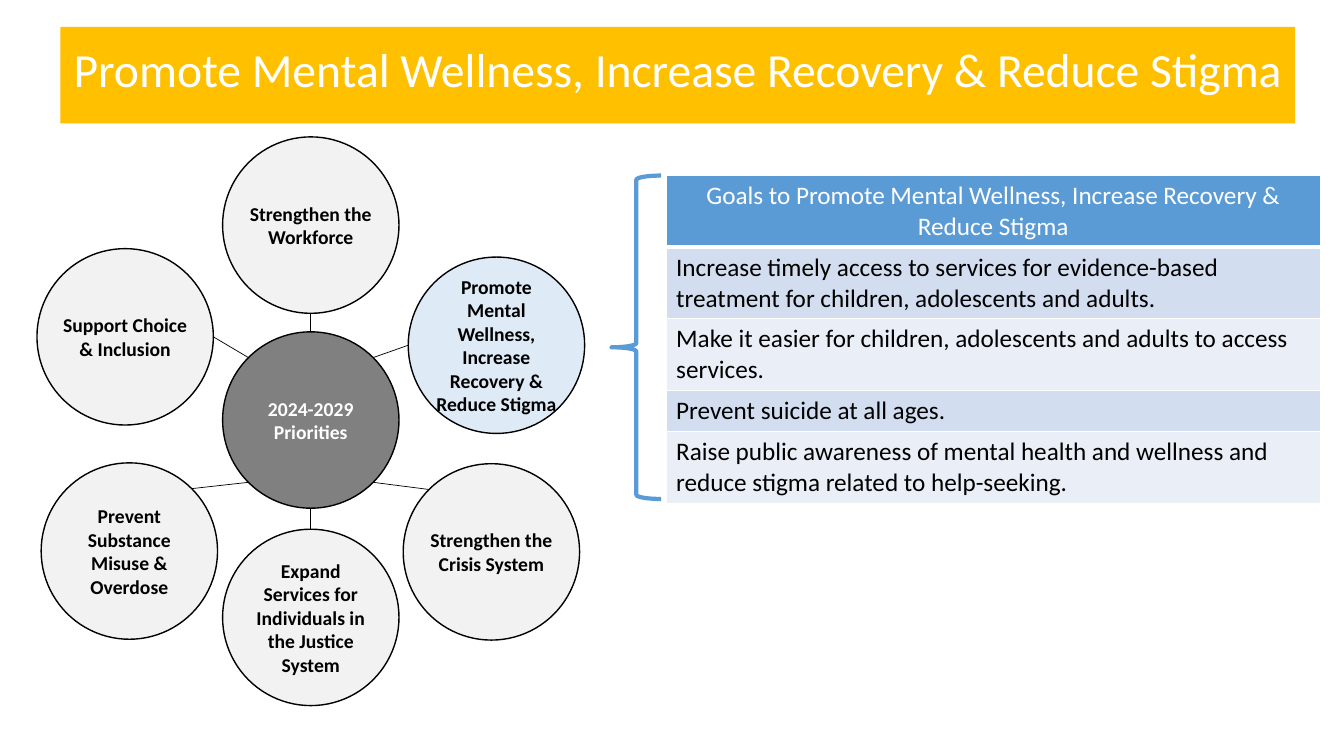
from math import cos, pi, sin

from lxml.etree import SubElement
from pptx import Presentation
from pptx.dml.color import RGBColor
from pptx.enum.shapes import MSO_CONNECTOR, MSO_SHAPE
from pptx.enum.text import MSO_ANCHOR, MSO_AUTO_SIZE, PP_ALIGN
from pptx.oxml.ns import qn
from pptx.util import Inches, Pt

TITLE = "Promote Mental Wellness, Increase Recovery & Reduce Stigma"
SIZE = 21
HUB = (26.5, 39.5)
RIGHT, LOW_RIGHT, LOW, LOW_LEFT, LEFT, UP_LEFT, UP, UP_RIGHT = range(8)
NODES = [
    ("Prevent Substance Misuse & Overdose", (4.9, 55.1), "F2F2F2", LOW_LEFT, UP_RIGHT),
    ("Strengthen the Crisis System", (48, 55.2), "F2F2F2", LOW_RIGHT, UP_LEFT),
    ("Strengthen the Workforce", (26.5, 16.3), "F2F2F2", UP, LOW),
    (TITLE, (48.6, 30.6), "DEEBF7", UP_RIGHT, LEFT),
    ("Support Choice & Inclusion", (4.4, 29.6), "F2F2F2", UP_LEFT, RIGHT),
    ("Expand Services for Individuals in the Justice System", (26.5, 63), "F2F2F2", LOW, UP),
]
GOALS = [
    ("Increase timely access to services for evidence-based treatment for children, "
     "adolescents and adults.", 8.5),
    ("Make it easier for children, adolescents and adults to access services.", 8.5),
    ("Prevent suicide at all ages.", 4.9),
    ("Raise public awareness of mental health and wellness and reduce stigma "
     "related to help-seeking.", 8.5),
]


def color(code):
    return RGBColor.from_string(code)


def grid(*cells):
    """Turn cells of a 160 by 90 grid into slide lengths."""
    return [Inches(cell / 12) for cell in cells]


def rim(spot, side):
    """Find a point on a circle's rim, in eighths of a turn."""
    turn = side * pi / 4
    half = SIZE / 2
    return spot[0] + half + half * cos(turn), spot[1] + half + half * sin(turn)


class Deck:
    """Hold the style and the current slide."""

    font = "Calibri"
    ink = "000000"
    white = "FFFFFF"
    blue = "5B9BD5"
    bands = ("D2DEEF", "EAEFF7")

    def __init__(self):
        self.file = Presentation()
        self.file.slide_width, self.file.slide_height = grid(160, 90)
        self.slide = self.file.slides.add_slide(self.file.slide_layouts[5])
        self.shapes = self.slide.shapes

    def label(self, frame, text, size, tint, bold=False, align=PP_ALIGN.CENTER):
        frame.text = text
        line = frame.paragraphs[0]
        line.alignment = align
        line.font.name = self.font
        line.font.size = Pt(size)
        line.font.bold = bold
        line.font.color.rgb = color(tint)
        return line

    def title(self, text, box, fill):
        shape = self.shapes.title
        shape.left, shape.top, shape.width, shape.height = grid(*box)
        shape.fill.solid()
        shape.fill.fore_color.rgb = color(fill)
        frame = shape.text_frame
        frame.word_wrap = True
        frame.auto_size = MSO_AUTO_SIZE.NONE
        frame.vertical_anchor = MSO_ANCHOR.MIDDLE
        self.label(frame, text, 34, self.white).line_spacing = 0.7

    def circle(self, text, spot, fill, tint):
        shape = self.shapes.add_shape(MSO_SHAPE.OVAL, *grid(*spot, SIZE, SIZE))
        shape.shadow.inherit = False
        shape.fill.solid()
        shape.fill.fore_color.rgb = color(fill)
        shape.line.color.rgb = color(self.ink)
        shape.line.width = Pt(1)
        frame = shape.text_frame
        frame.word_wrap = True
        frame.vertical_anchor = MSO_ANCHOR.MIDDLE
        frame.margin_left = frame.margin_right = 0
        self.label(frame, text, 14, tint, True)

    def link(self, start, end):
        line = self.shapes.add_connector(MSO_CONNECTOR.STRAIGHT, *grid(*start, *end))
        line.line.color.rgb = color(self.ink)
        line.line.width = Pt(0.5)
        SubElement(line._element.spPr, qn("a:effectLst"))

    def brace(self, box):
        shape = self.shapes.add_shape(MSO_SHAPE.RIGHT_BRACE, *grid(*box))
        shape.rotation = 180
        shape.adjustments[0] = 0.083
        shape.adjustments[1] = 0.469
        shape.shadow.inherit = False
        shape.fill.background()
        shape.line.color.rgb = color(self.blue)
        shape.line.width = Pt(3)

    def cell(self, cell, fill, base):
        """Give a cell white edges and a plain fill."""
        props = cell._tc.get_or_add_tcPr()
        for side in "LRTB":
            width = Pt(base if side == "B" else 1)
            edge = SubElement(props, qn(f"a:ln{side}"), w=str(width))
            SubElement(SubElement(edge, qn("a:solidFill")), qn("a:srgbClr"), val=self.white)
        cell.fill.solid()
        cell.fill.fore_color.rgb = color(fill)

    def bullet(self, line):
        props = line._p.get_or_add_pPr()
        props.set("marL", str(Inches(0.31)))
        props.set("indent", str(-Inches(0.31)))
        SubElement(props, qn("a:buFont"), typeface="Arial")
        SubElement(props, qn("a:buChar"), char="•")

    def table(self, head, goals, box):
        table = self.shapes.add_table(len(goals) + 1, 1, *grid(*box)).table
        for row, (text, rise) in enumerate([(head, 8.5), *goals]):
            table.rows[row].height = grid(rise)[0]
            cell = table.cell(row, 0)
            frame = cell.text_frame
            if row:
                self.cell(cell, self.bands[(row - 1) % 2], 1)
                self.bullet(frame.paragraphs[0])
                self.label(frame, text, 18, self.ink, align=PP_ALIGN.LEFT)
            else:
                self.cell(cell, self.blue, 3)
                self.label(frame, text, 18, self.white)


def main():
    deck = Deck()
    deck.title(TITLE, (7.2, 3.2, 147, 11.5), "FFC000")
    deck.circle("2024-2029 Priorities", HUB, "808080", deck.white)
    for text, spot, fill, start, end in NODES:
        deck.circle(text, spot, fill, deck.ink)
        deck.link(rim(HUB, start), rim(spot, end))
    deck.table(f"Goals to {TITLE}", GOALS, (79.3, 20.9, 77.9, 38.9))
    deck.brace((72.8, 20.9, 5.9, 38.5))
    deck.file.save("out.pptx")


if __name__ == "__main__":
    main()
